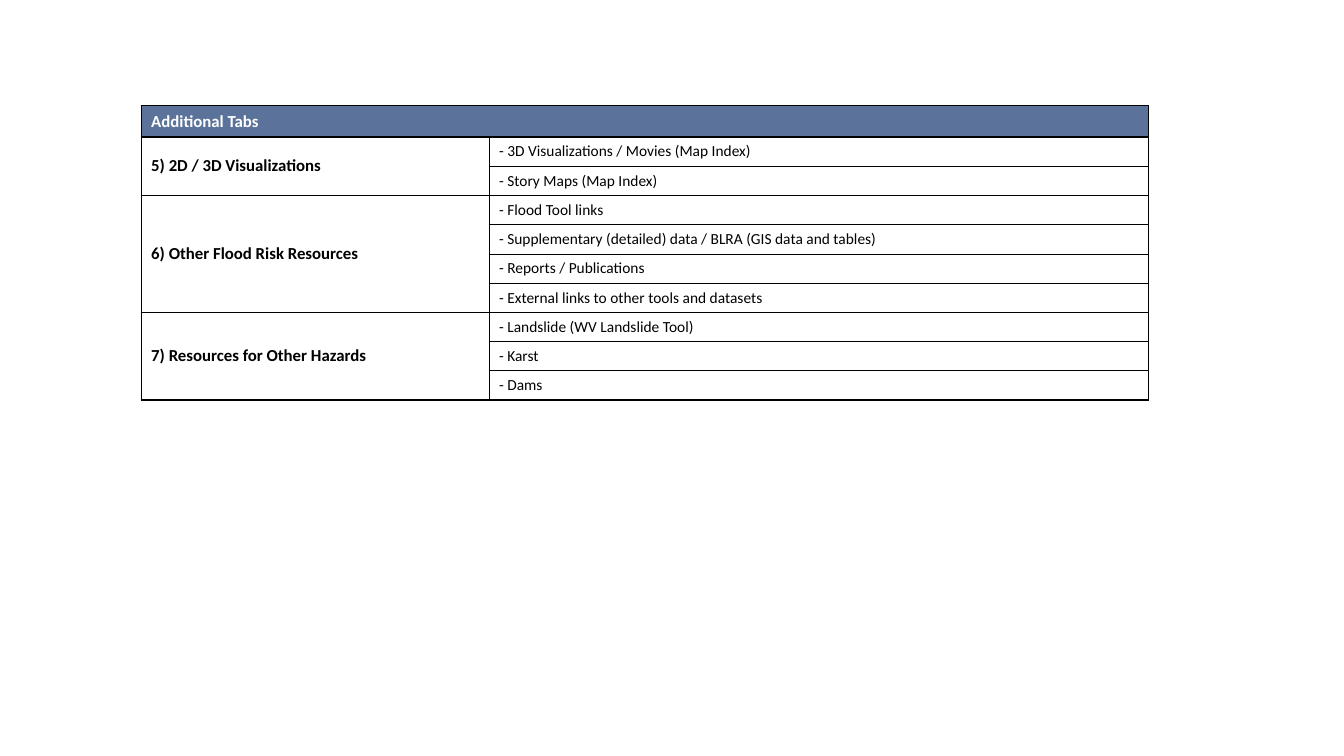
from lxml.etree import SubElement as Sub
from pptx import Presentation
from pptx.dml.color import RGBColor
from pptx.enum.text import MSO_ANCHOR as Anchor
from pptx.oxml.ns import qn
from pptx.util import Inches, Pt

WIDE, HIGH = 13.33, 7.5
BOX = (1.4, 1.05, 9.99)
SPLIT = 3.45
HEAD, ROW = 0.31, 0.29
THICK, THIN = 1, 0.5

TITLE = "Additional Tabs"
TABS = [
    ("5) 2D / 3D Visualizations", [
        "- 3D Visualizations / Movies (Map Index)",
        "- Story Maps (Map Index)"]),
    ("6) Other Flood Risk Resources", [
        "- Flood Tool links",
        "- Supplementary (detailed) data / BLRA (GIS data and tables)",
        "- Reports / Publications",
        "- External links to other tools and datasets"]),
    ("7) Resources for Other Hazards", [
        "- Landslide (WV Landslide Tool)",
        "- Karst",
        "- Dams"]),
]


def color(code):
    return RGBColor.from_string(code)


def edge(cell, left, right, top, bottom):
    """Draw the four borders of a cell, with widths in points."""
    props = cell._tc.get_or_add_tcPr()
    for side, width in zip("LRTB", (left, right, top, bottom)):
        line = Sub(props, qn(f"a:ln{side}"), w=str(Pt(width)))
        fill = Sub(line, qn("a:solidFill"))
        Sub(fill, qn("a:srgbClr"), val="000000")


def style(cell, borders, fill=None):
    edge(cell, *borders)
    if fill:
        cell.fill.solid()
        cell.fill.fore_color.rgb = color(fill)
    else:
        cell.fill.background()


def write(cell, text, size=12, bold=True, ink="000000"):
    cell.vertical_anchor = Anchor.MIDDLE
    para = cell.text_frame.paragraphs[0]
    para.text = text
    font = para.font
    font.name, font.size, font.bold = "Calibri", Pt(size), bold
    font.color.rgb = color(ink)


def add_group(table, start, label, items):
    """Fill one merged label and its rows; return the next free row."""
    last = len(items) - 1
    for i, item in enumerate(items):
        tab, cell = table.cell(start + i, 0), table.cell(start + i, 1)
        style(tab, (THICK, THIN, THICK, THICK))
        style(cell, (THIN, THICK, THIN if i else THICK,
                     THIN if i < last else THICK))
        write(cell, item, 11, False)
    head = table.cell(start, 0)
    head.merge(table.cell(start + last, 0))
    write(head, label)
    return start + len(items)


def add_tabs(slide, left, top, width):
    count = sum(len(items) for _, items in TABS)
    frame = slide.shapes.add_table(
        count + 1, 2, Inches(left), Inches(top), Inches(width),
        Inches(HEAD + count * ROW))
    table = frame.table
    table.first_row = table.horz_banding = False
    table.columns[0].width = Inches(SPLIT)
    table.columns[1].width = Inches(width - SPLIT)
    for i, row in enumerate(table.rows):
        row.height = Inches(ROW if i else HEAD)

    for cell in table.rows[0].cells:
        style(cell, [THICK] * 4, "5B739B")
    head = table.cell(0, 0)
    head.merge(table.cell(0, 1))
    write(head, TITLE, ink="FFFFFF")

    start = 1
    for label, items in TABS:
        start = add_group(table, start, label, items)


def main():
    deck = Presentation()
    deck.slide_width, deck.slide_height = Inches(WIDE), Inches(HIGH)
    slide = deck.slides.add_slide(deck.slide_layouts[6])
    add_tabs(slide, *BOX)
    deck.save("out.pptx")


if __name__ == "__main__":
    main()
